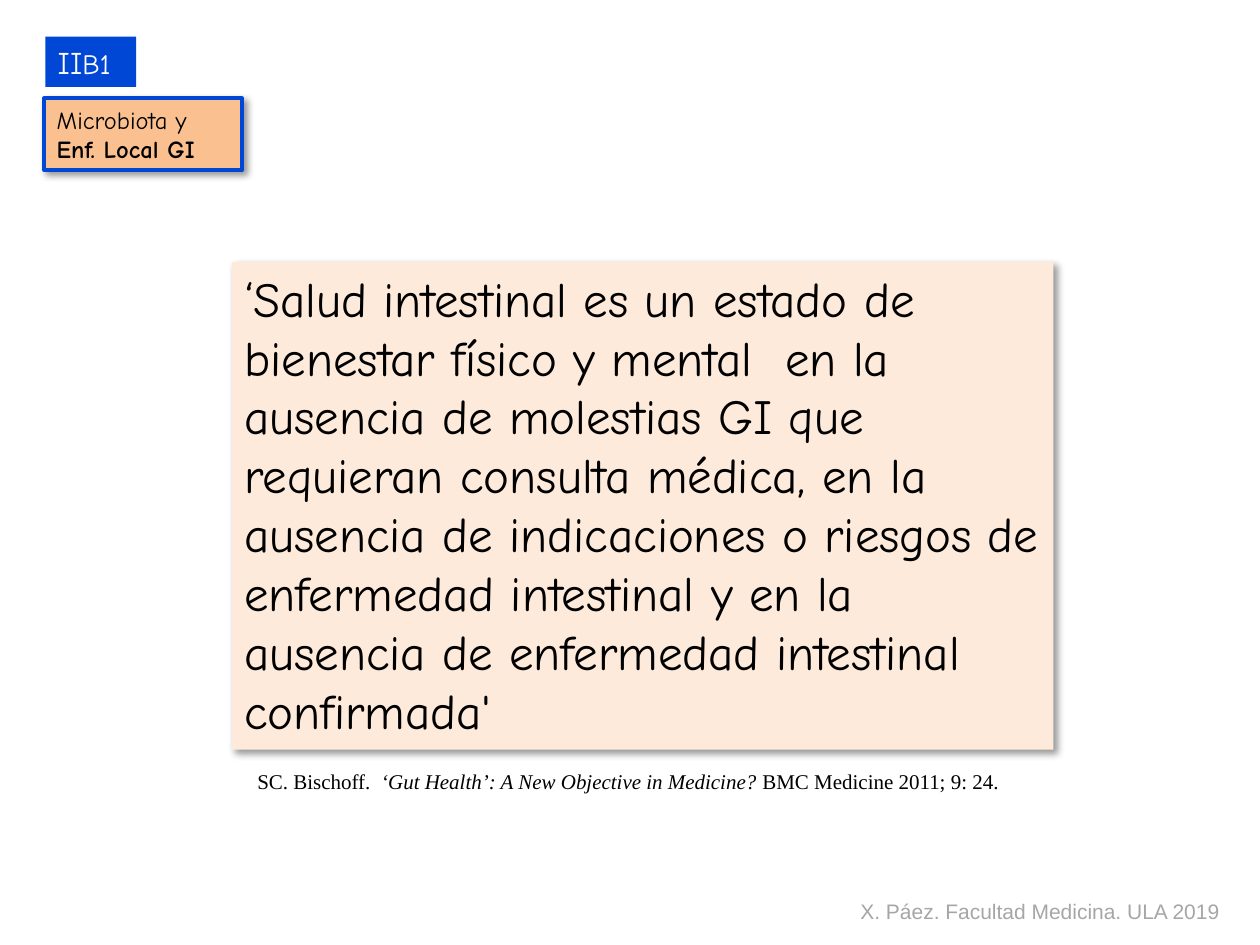
import pptx
import pptx.dml.color
import pptx.enum.shapes
import pptx.enum.text
import pptx.oxml
import pptx.oxml.ns
import pptx.util

Inches, Pt = pptx.util.Inches, pptx.util.Pt
RGBColor = pptx.dml.color.RGBColor
Align = pptx.enum.text.PP_ALIGN
Anchor = pptx.enum.text.MSO_ANCHOR

BLACK = RGBColor(0x00, 0x00, 0x00)
WHITE = RGBColor(0xFF, 0xFF, 0xFF)
GRAY = RGBColor(0xA6, 0xA6, 0xA6)
BLUE = RGBColor(0x00, 0x47, 0xD6)
ORANGE = RGBColor(0xFA, 0xC0, 0x90)
CREAM = RGBColor(0xFD, 0xEA, 0xDA)
HAND = "Comic Neue"

TITLE = [[("Microbiota y", {})], [("Enf. Local GI", {"bold": True})]]
SECTION = [[("II", {"size": Pt(18)}), ("B1", {"size": Pt(16)})]]
QUOTE = [[(
    "‘Salud intestinal es un estado de bienestar físico y mental  en la "
    "ausencia de molestias GI que requieran consulta médica, en la ausencia "
    "de indicaciones o riesgos de enfermedad intestinal y en la ausencia de "
    "enfermedad intestinal confirmada'", {})]]
CITATION = [[
    ("SC. Bischoff.  ", {}),
    ("‘Gut Health’: A New Objective in Medicine?", {"italic": True}),
    (" BMC Medicine 2011; 9: 24.", {}),
]]
CREDIT = [[("X. Páez. Facultad Medicina. ULA 2019", {})]]


def place(shape, left, top, width, height):
    shape.left, shape.top = Inches(left), Inches(top)
    shape.width, shape.height = Inches(width), Inches(height)


def write(shape, paragraphs, font, size, color, align=Align.LEFT, wrap=True):
    frame = shape.text_frame
    frame.word_wrap = wrap
    frame.auto_size = pptx.enum.text.MSO_AUTO_SIZE.NONE
    frame.vertical_anchor = Anchor.TOP
    for index, runs in enumerate(paragraphs):
        paragraph = frame.add_paragraph() if index else frame.paragraphs[0]
        paragraph.alignment = align
        paragraph.font.name = font
        paragraph.font.size = Pt(size)
        paragraph.font.color.rgb = color
        for text, style in runs:
            run = paragraph.add_run()
            run.text = text
            for name, value in style.items():
                setattr(run.font, name, value)


def paint(shape, fill, line=None):
    shape.fill.solid()
    shape.fill.fore_color.rgb = fill
    if line is None:
        shape.line.fill.background()
    else:
        shape.line.color.rgb = line
        shape.line.width = Pt(2.25)


def add_shadow(shape):
    effects = pptx.oxml.parse_xml(
        f'<a:effectLst {pptx.oxml.ns.nsdecls("a")}>'
        f'<a:outerShdw blurRad="{Pt(4)}" dist="{Pt(3)}" dir="2700000" '
        'algn="tl" rotWithShape="0"><a:srgbClr val="000000">'
        '<a:alpha val="40000"/></a:srgbClr></a:outerShdw></a:effectLst>')
    properties = shape.element.spPr
    for old in properties.findall(pptx.oxml.ns.qn("a:effectLst")):
        properties.remove(old)
    properties.append(effects)


def add_box(slide, left, top, width, height, fill):
    shape = slide.shapes.add_shape(
        pptx.enum.shapes.MSO_SHAPE.RECTANGLE,
        Inches(left), Inches(top), Inches(width), Inches(height))
    shape.shadow.inherit = False
    paint(shape, fill)
    return shape


def add_text(slide, left, top, width, height):
    return slide.shapes.add_textbox(
        Inches(left), Inches(top), Inches(width), Inches(height))


def main():
    presentation = pptx.Presentation()
    presentation.slide_width, presentation.slide_height = Inches(10), Inches(7.5)
    slide = presentation.slides.add_slide(presentation.slide_layouts[5])

    title = slide.shapes.title
    place(title, 0.35, 0.78, 1.57, 0.57)
    paint(title, ORANGE, BLUE)
    add_shadow(title)
    write(title, TITLE, HAND, 14, BLACK)

    section = add_box(slide, 0.36, 0.29, 0.72, 0.4, BLUE)
    write(section, SECTION, HAND, 18, WHITE, wrap=False)

    quote = add_box(slide, 1.84, 2.08, 6.52, 3.87, CREAM)
    add_shadow(quote)
    write(quote, QUOTE, HAND, 28, BLACK)

    citation = add_text(slide, 1.89, 6.05, 6.19, 0.3)
    write(citation, CITATION, "Times New Roman", 12, BLACK, Align.CENTER)

    credit = add_text(slide, 6.73, 7.08, 3.08, 0.3)
    write(credit, CREDIT, "Arial", 12, GRAY, wrap=False)

    presentation.save("out.pptx")


if __name__ == "__main__":
    main()
